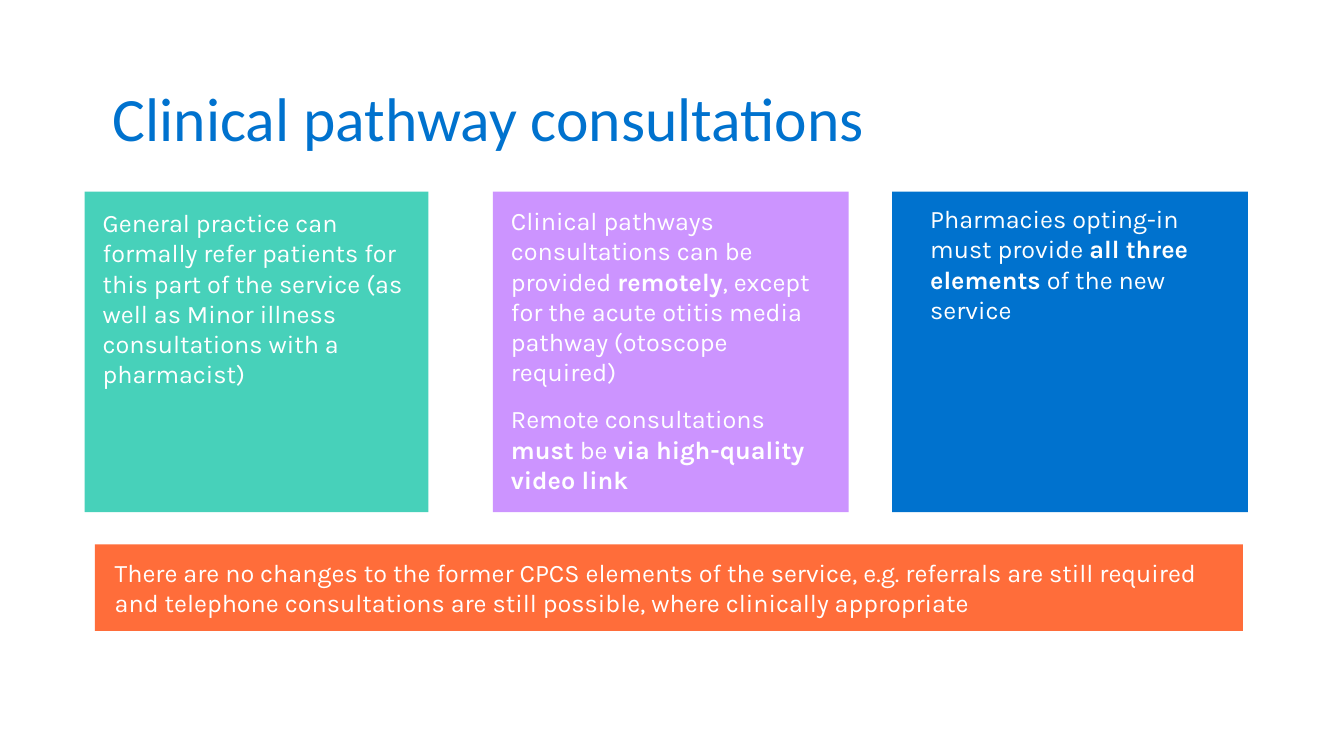
from pptx import Presentation
from pptx.dml.color import RGBColor
from pptx.enum import shapes, text
from pptx.util import Pt

HUES = {"blue": "0072CE", "teal": "47D1BA", "lilac": "CC94FF",
        "orange": "FF6D3A", "white": "FFFFFF"}

TOP, HIGH = 136.8, 228.96

CARDS = [
    ("teal", (60.48, TOP, 245.52, HIGH), (5.76, 7.92, 236.16, 138.24),
     [[("General practice can formally refer patients for this part of the "
        "service (as well as Minor illness consultations with a pharmacist)", False)]]),
    ("lilac", (352.08, TOP, 254.16, HIGH), (5.76, 6.48, 239.04, 216),
     [[("Clinical pathways consultations can be provided ", False),
       ("remotely", True),
       (", except for the acute otitis media pathway (otoscope required)", False)],
      [("Remote consultations ", False), ("must", True), (" be ", False),
       ("via high-quality video link", True)]]),
    ("blue", (637.2, TOP, 254.16, HIGH), (20.16, 5.04, 236.88, 128.16),
     [[("Pharmacies opting-in must provide ", False),
       ("all three elements", True), (" of the new service", False)]]),
    ("orange", (67.68, 388.8, 820.08, 61.92), (7.2, 5.76, 806.4, 51.12),
     [[("There are no changes to the former CPCS elements of the service, e.g. "
        "referrals are still required and telephone consultations are still "
        "possible, where clinically appropriate", False)]]),
]


def color(name):
    return RGBColor.from_string(HUES[name])


def add_title(slide, box):
    title = slide.shapes.title
    title.left, title.top, title.width, title.height = map(Pt, box)
    frame = title.text_frame
    frame.text = "Clinical pathway consultations"
    frame.vertical_anchor = text.MSO_ANCHOR.MIDDLE
    para = frame.paragraphs[0]
    para.alignment = text.PP_ALIGN.LEFT
    para.line_spacing = 1.1
    font = para.runs[0].font
    font.name, font.size = "Calibri", Pt(44)
    font.color.rgb = color("blue")


def add_card(slide, hue, box, inset, paras):
    left, top = box[:2]
    card = slide.shapes.add_shape(shapes.MSO_SHAPE.RECTANGLE, *map(Pt, box))
    card.shadow.inherit = False
    card.fill.solid()
    card.fill.fore_color.rgb = color(hue)
    card.line.fill.background()

    dx, dy, width, height = inset
    label = slide.shapes.add_textbox(Pt(left + dx), Pt(top + dy), Pt(width), Pt(height))
    frame = label.text_frame
    frame.word_wrap = True
    frame.auto_size = text.MSO_AUTO_SIZE.SHAPE_TO_FIT_TEXT
    for i, parts in enumerate(paras):
        para = frame.add_paragraph() if i else frame.paragraphs[0]
        if i:
            para.space_before = Pt(12)
        for words, bold in parts:
            run = para.add_run()
            run.text = words
            run.font.name, run.font.size = "Karla", Pt(18)
            run.font.bold = bold
            run.font.color.rgb = color("white")


def main():
    deck = Presentation()
    deck.slide_width, deck.slide_height = Pt(960), Pt(540)
    slide = deck.slides.add_slide(deck.slide_layouts[5])
    slide.background.fill.solid()
    slide.background.fill.fore_color.rgb = color("white")
    add_title(slide, (73.44, 28.8, 820.08, 104.4))
    for card in CARDS:
        add_card(slide, *card)
    deck.save("out.pptx")


if __name__ == "__main__":
    main()
